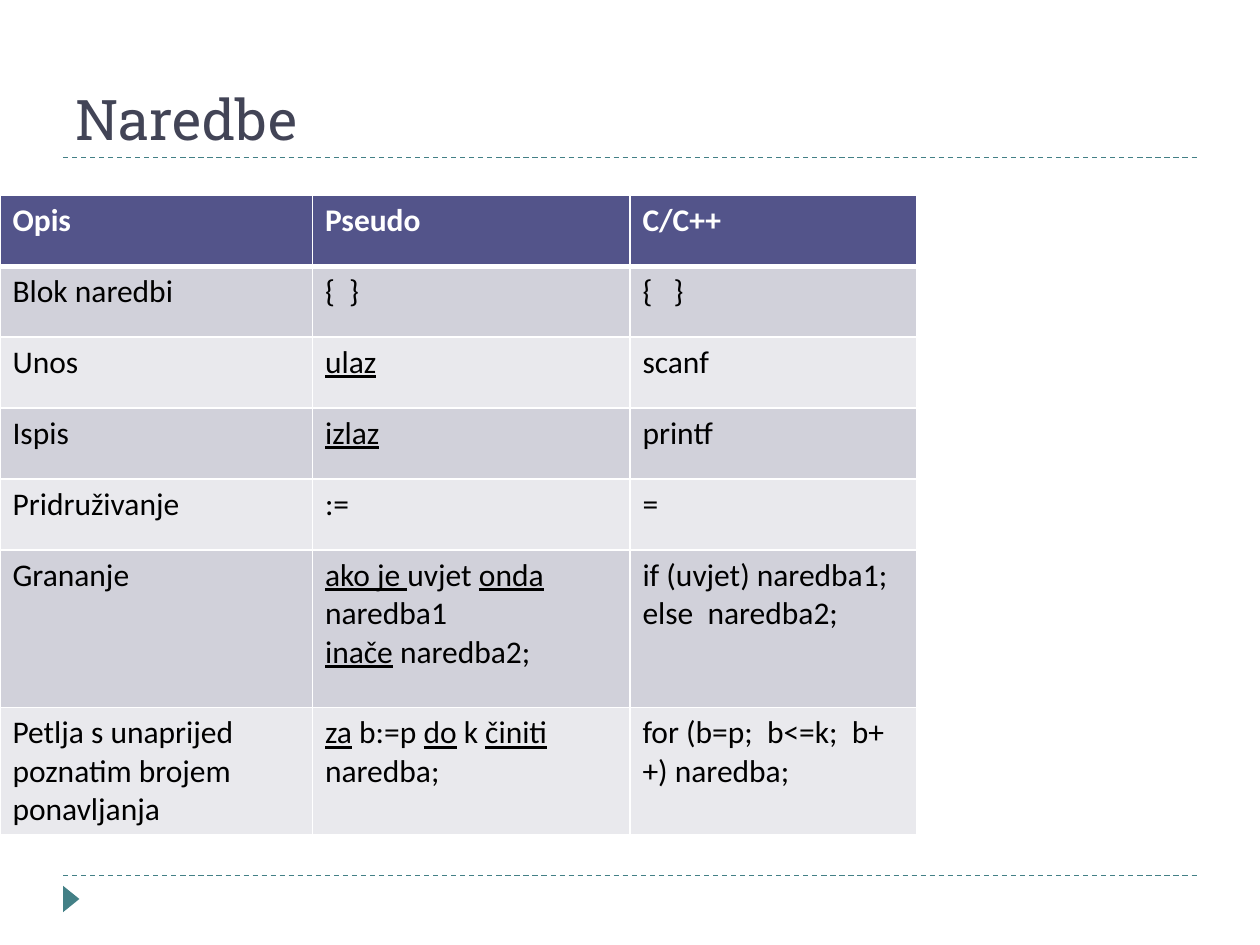
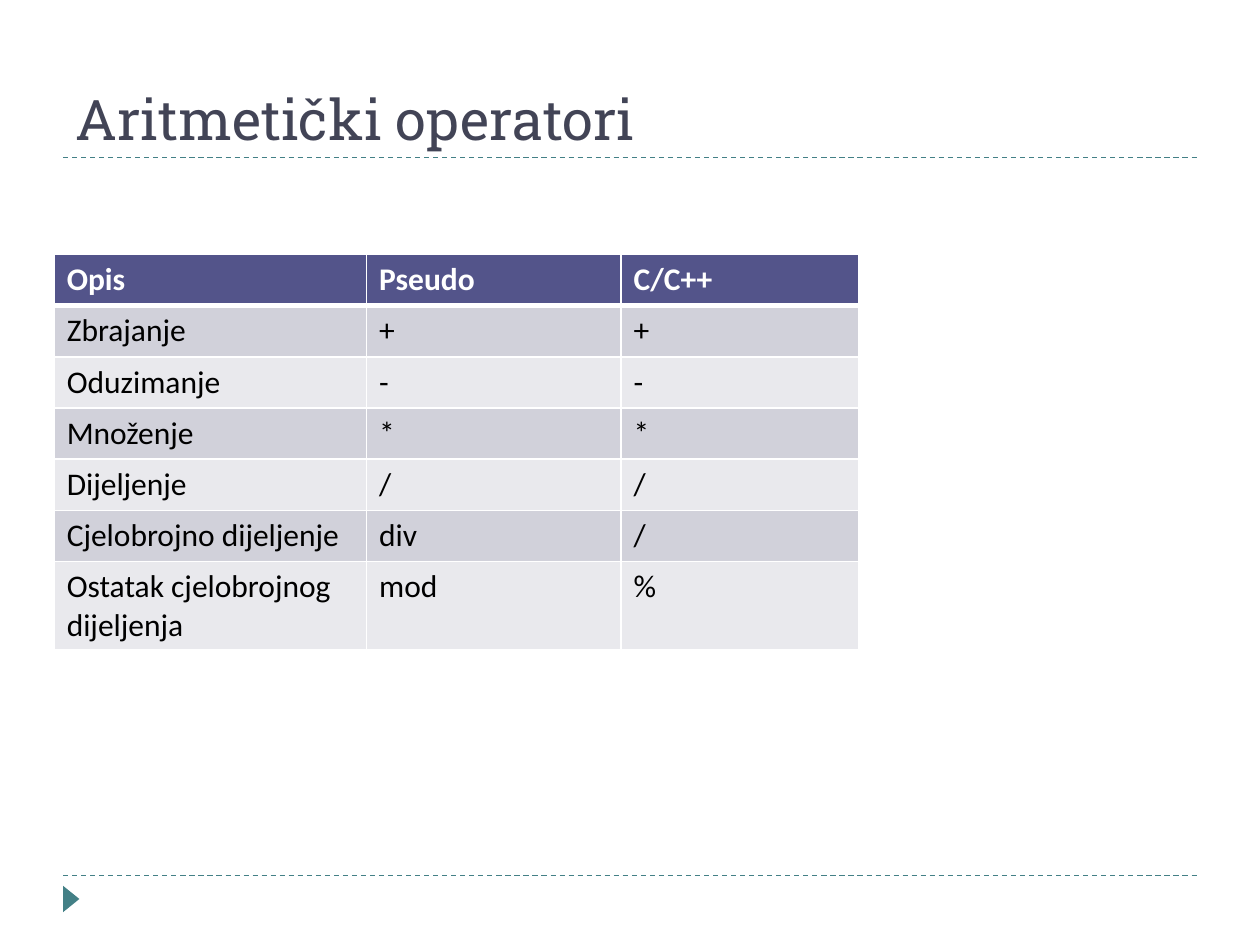
from lxml import etree
from pptx import Presentation
from pptx import util as u
from pptx.dml.color import RGBColor
from pptx.enum import dml, shapes, text
from pptx.oxml import ns

# Shared style
WHITE = RGBColor(0xFF, 0xFF, 0xFF)
BLACK = RGBColor(0x00, 0x00, 0x00)
TEAL = RGBColor(0x43, 0x80, 0x86)
SLATE = RGBColor(0x42, 0x44, 0x56)
INDIGO = RGBColor(0x53, 0x54, 0x8A)
BANDS = (RGBColor(0xD1, 0xD1, 0xDA), RGBColor(0xE9, 0xE9, 0xED))
TITLE_FONT, BODY_FONT = "Roboto Slab", "Calibri"

# The slide is a grid of square cells
COLS, ROWS = 100, 75
LEFT, RIGHT = 5, 95
TITLE_RULE, FOOTER_RULE = 12.5, 69.5

HEADER = ("Opis", "Pseudo", "C/C++")
# Underscores enclose underlined words
STATEMENTS = (
    ("Blok naredbi", "{  }", "{   }"),
    ("Unos", "_ulaz_", "scanf"),
    ("Ispis", "_izlaz_", "printf"),
    ("Pridruživanje", ":=", "="),
    ("Grananje",
     "_ako je _uvjet _onda_ naredba1\n_inače_ naredba2;",
     "if (uvjet) naredba1;\nelse  naredba2;"),
    ("Petlja s unaprijed poznatim brojem ponavljanja",
     "_za_ b:=p _do_ k _činiti_ naredba;",
     "for (b=p;  b<=k;  b++) naredba;"),
)
OPERATORS = (
    ("Zbrajanje", "+", "+"),
    ("Oduzimanje", "-", "-"),
    ("Množenje", "*", "*"),
    ("Dijeljenje", "/", "/"),
    ("Cjelobrojno dijeljenje", "div", "/"),
    ("Ostatak cjelobrojnog dijeljenja", "mod", "%"),
)


def write(tf, content, font=BODY_FONT, size=18, color=BLACK, bold=False):
    """Fill a text frame: one paragraph a line, underscores toggle underline."""
    for i, line in enumerate(content.split("\n")):
        p = tf.add_paragraph() if i else tf.paragraphs[0]
        for j, piece in enumerate(line.split("_")):
            if piece:
                r = p.add_run()
                r.text = piece
                r.font.name, r.font.size = font, u.Pt(size)
                r.font.bold, r.font.underline = bold, j % 2 == 1
                r.font.color.rgb = color


def add_border(cell, side, width):
    tc_pr = cell._tc.get_or_add_tcPr()
    ln = etree.SubElement(tc_pr, ns.qn(f"a:ln{side}"), w=str(u.Pt(width)))
    fill = etree.SubElement(ln, ns.qn("a:solidFill"))
    etree.SubElement(fill, ns.qn("a:srgbClr"), val=str(WHITE))


class Deck:
    def __init__(self):
        self.prs = Presentation()
        self.prs.slide_width, self.prs.slide_height = u.Inches(10), u.Inches(7.5)
        self.s = None

    def x(self, cols):
        return round(self.prs.slide_width * cols / COLS)

    def y(self, rows):
        return round(self.prs.slide_height * rows / ROWS)

    def box(self, left, top, width, height):
        return self.x(left), self.y(top), self.x(width), self.y(height)

    def slide(self, title):
        self.s = self.prs.slides.add_slide(self.prs.slide_layouts[6])
        self.rule(FOOTER_RULE)
        self.rule(TITLE_RULE)
        self.marker()
        self.title(title)

    def rule(self, row):
        line = self.s.shapes.add_connector(
            shapes.MSO_CONNECTOR.STRAIGHT,
            self.x(LEFT), self.y(row), self.x(RIGHT), self.y(row))
        line.line.color.rgb = TEAL
        line.line.width = u.Pt(0.75)
        line.line.dash_style = dml.MSO_LINE.DASH
        etree.SubElement(line._element.spPr, ns.qn("a:effectLst"))

    def marker(self):
        sp = self.s.shapes.add_shape(
            shapes.MSO_SHAPE.ISOSCELES_TRIANGLE, *self.box(4.6, 70.7, 2.1, 1.3))
        sp.rotation = 90
        sp.shadow.inherit = False
        sp.fill.solid()
        sp.fill.fore_color.rgb = TEAL
        sp.line.fill.background()

    def title(self, content):
        top = 1.7
        sp = self.s.shapes.add_textbox(
            *self.box(LEFT, top, RIGHT - LEFT, TITLE_RULE - top))
        tf = sp.text_frame
        tf.word_wrap = True
        tf.vertical_anchor = text.MSO_ANCHOR.BOTTOM
        write(tf, content, font=TITLE_FONT, size=32, color=SLATE)

    def table(self, left, top, widths, heights, body):
        rows = (HEADER, *body)
        table = self.s.shapes.add_table(
            len(rows), len(widths),
            *self.box(left, top, sum(widths), sum(heights))).table
        for column, width in zip(table.columns, widths):
            column.width = self.x(width)
        for i, (row, height) in enumerate(zip(rows, heights)):
            table.rows[i].height = self.y(height)
            for j, content in enumerate(row):
                self.cell(table.cell(i, j), content, i)

    def cell(self, cell, content, row):
        # A thick rule parts the header from the body
        top, bottom = (3 if row == 1 else 1), (3 if row == 0 else 1)
        for side, width in zip("LRTB", (1, 1, top, bottom)):
            add_border(cell, side, width)
        header = row == 0
        cell.fill.solid()
        cell.fill.fore_color.rgb = INDIGO if header else BANDS[(row - 1) % 2]
        write(cell.text_frame, content, color=WHITE if header else BLACK, bold=header)


def main():
    deck = Deck()

    # Statements
    deck.slide("Naredbe")
    deck.table(0, 15.5, (24.8, 25.2, 22.8), [5.63] * 5 + [12.5, 10.1], STATEMENTS)

    # Arithmetic operators
    deck.slide("Aritmetički operatori")
    deck.table(4.3, 20.2, (24.8, 20.2, 18.9), [4.06] * 6 + [7], OPERATORS)

    deck.prs.save("out.pptx")


if __name__ == "__main__":
    main()
